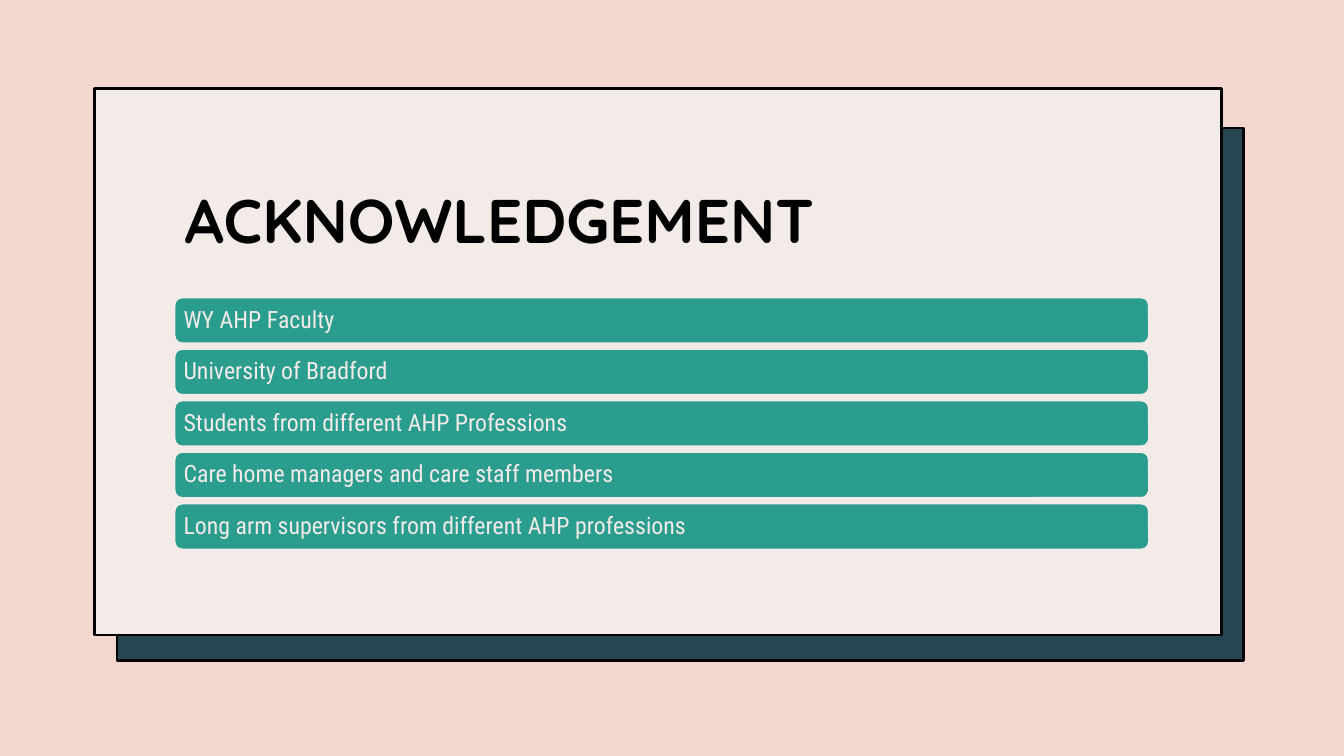
"""Build the acknowledgement slide: a title and five bars on a layered card."""
from dataclasses import dataclass

from pptx import Presentation
from pptx.dml.color import RGBColor
from pptx.enum.shapes import MSO_SHAPE
from pptx.enum.text import MSO_ANCHOR, MSO_AUTO_SIZE, PP_ALIGN
from pptx.util import Pt


@dataclass(frozen=True)
class Theme:
    background: str = "F3D6CD"
    card: str = "F3EBE8"
    backing: str = "264653"
    bar: str = "2A9D8F"
    ink: str = "000000"
    title_font: str = "Quicksand"
    body_font: str = "Roboto Condensed"
    title_size: int = 44
    body_size: int = 17


theme = Theme()


def add_box(s, kind, box, fill, line, weight):
    sp = s.shapes.add_shape(kind, *map(Pt, box))
    sp.shadow.inherit = False
    sp.fill.solid()
    sp.fill.fore_color.rgb = RGBColor.from_string(fill)
    sp.line.color.rgb = RGBColor.from_string(line)
    sp.line.width = Pt(weight)
    return sp


def set_text(sp, text, font, size, color, anchor, bold=False):
    tf = sp.text_frame
    tf.text = text
    tf.word_wrap = True
    tf.auto_size = MSO_AUTO_SIZE.NONE
    tf.vertical_anchor = anchor
    p = tf.paragraphs[0]
    p.alignment = PP_ALIGN.LEFT
    p.line_spacing = 0.9
    p.font.name = font
    p.font.size = Pt(size)
    p.font.bold = bold
    p.font.color.rgb = RGBColor.from_string(color)
    return tf


prs = Presentation()
prs.slide_width, prs.slide_height = Pt(960), Pt(540)
s = prs.slides.add_slide(prs.slide_layouts[5])
s.background.fill.solid()
s.background.fill.fore_color.rgb = RGBColor.from_string(theme.background)

add_box(s, MSO_SHAPE.RECTANGLE, (83.5, 91.4, 805, 380.2), theme.backing, theme.ink, 2)
add_box(s, MSO_SHAPE.RECTANGLE, (67.7, 63.4, 805, 390.2), theme.card, theme.ink, 2)

left, width = 124.6, 696.2
title = s.shapes.title
title.left, title.top, title.width, title.height = map(Pt, (left, 120.2, width, 67))
set_text(title, "ACKNOWLEDGEMENT", theme.title_font, theme.title_size, theme.ink,
         MSO_ANCHOR.BOTTOM, bold=True)
s.shapes.element.append(title.element)

thanks = [
    "WY AHP Faculty",
    "University of Bradford",
    "Students from different AHP Professions",
    "Care home managers and care staff members",
    "Long arm supervisors from different AHP professions",
]
top, height, pitch = 212.4, 33, 36.8
for i, text in enumerate(thanks):
    sp = add_box(s, MSO_SHAPE.ROUNDED_RECTANGLE, (left, top + i * pitch, width, height),
                 theme.bar, theme.card, 1.5)
    tf = set_text(sp, text, theme.body_font, theme.body_size, theme.card, MSO_ANCHOR.MIDDLE)
    tf.margin_left = tf.margin_right = tf.margin_top = tf.margin_bottom = Pt(5)

prs.save("out.pptx")
